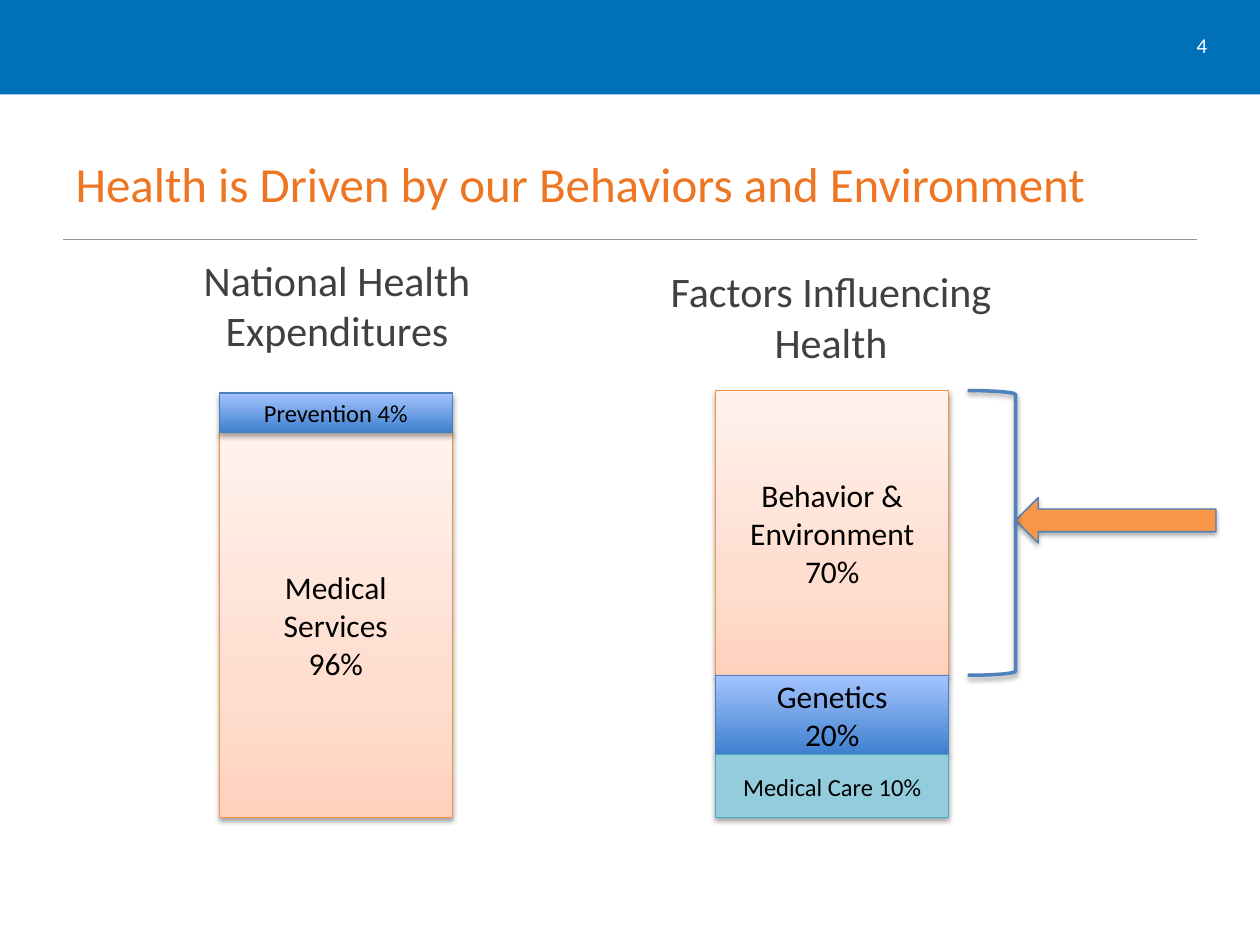
from lxml import etree
from pptx import Presentation
from pptx.dml.color import RGBColor
from pptx.enum.shapes import MSO_CONNECTOR, MSO_SHAPE
from pptx.enum.text import MSO_ANCHOR, PP_ALIGN
from pptx.oxml.ns import qn
from pptx.util import Inches, Pt

RECTANGLE = MSO_SHAPE.RECTANGLE
LEFT_ARROW = MSO_SHAPE.LEFT_ARROW
RIGHT_BRACKET = MSO_SHAPE.RIGHT_BRACKET
STRAIGHT = MSO_CONNECTOR.STRAIGHT
LEFT, CENTER, RIGHT = PP_ALIGN.LEFT, PP_ALIGN.CENTER, PP_ALIGN.RIGHT
TOP, MIDDLE = MSO_ANCHOR.TOP, MSO_ANCHOR.MIDDLE

FONT = "Calibri"
WHITE = RGBColor(0xFF, 0xFF, 0xFF)
BLACK = RGBColor(0x00, 0x00, 0x00)
GRAY = RGBColor(0x40, 0x40, 0x40)
RULE_GRAY = RGBColor(0x96, 0x96, 0x96)
BANNER_BLUE = RGBColor(0x00, 0x71, 0xB9)
TITLE_ORANGE = RGBColor(0xEE, 0x76, 0x23)
ARROW_ORANGE = RGBColor(0xF7, 0x96, 0x46)
EDGE_ORANGE = RGBColor(0xF6, 0x92, 0x40)
EDGE_BLUE = RGBColor(0x4B, 0x7E, 0xBC)
BRACKET_BLUE = RGBColor(0x4F, 0x81, 0xBD)
TEAL = RGBColor(0x93, 0xCD, 0xDD)
EDGE_TEAL = RGBColor(0x46, 0xAA, 0xC5)
PEACH_STOPS = [
    (0, RGBColor(0xFF, 0xD2, 0xBD)),
    (35, RGBColor(0xFF, 0xDE, 0xD0)),
    (100, RGBColor(0xFF, 0xF2, 0xED)),
]
BLUE_STOPS = [
    (0, RGBColor(0x3F, 0x80, 0xCE)),
    (100, RGBColor(0xA4, 0xC4, 0xFF)),
]

BAR_WIDTH = 1.85
PEACH = (PEACH_STOPS, EDGE_ORANGE)
BLUE = (BLUE_STOPS, EDGE_BLUE)
AQUA = (TEAL, EDGE_TEAL)
EXPENDITURES = [
    (0.31, ["Prevention 4%"], 14, BLUE),
    (3.06, ["Medical Services", "96%"], 18, PEACH),
]
FACTORS = [
    (2.26, ["Behavior & Environment", "70%"], 18, PEACH),
    (0.63, ["Genetics", "20%"], 18, BLUE),
    (0.5, ["Medical Care 10%"], 14, AQUA),
]


def write_text(frame, lines, size, color, align, anchor):
    frame.word_wrap = True
    frame.vertical_anchor = anchor
    for index, line in enumerate(lines):
        paragraph = frame.add_paragraph() if index else frame.paragraphs[0]
        paragraph.alignment = align
        run = paragraph.add_run()
        run.text = line
        run.font.name = FONT
        run.font.size = Pt(size)
        run.font.color.rgb = color


def add_label(slide, box, text, size, color, align):
    label = slide.shapes.add_textbox(*map(Inches, box))
    write_text(label.text_frame, [text], size, color, align, TOP)


def add_color(parent, color):
    return etree.SubElement(parent, qn("a:srgbClr"), val=str(color))


def set_gradient(shape, stops):
    shape.fill.gradient()
    shape.fill.gradient_angle = 90
    stop_list = shape._element.spPr.find(".//" + qn("a:gsLst"))
    for old_stop in list(stop_list):
        stop_list.remove(old_stop)
    for position, color in stops:
        stop = etree.SubElement(stop_list, qn("a:gs"), pos=str(position * 1000))
        add_color(stop, color)


def set_shadow(shape):
    effects = shape._element.spPr.find(qn("a:effectLst"))
    shadow = etree.SubElement(
        effects, qn("a:outerShdw"), blurRad=str(Pt(3.1)), dist=str(Pt(1.7)),
        dir="5400000", rotWithShape="0")
    etree.SubElement(add_color(shadow, BLACK), qn("a:alpha"), val="36000")


def add_figure(slide, kind, box, fill=None, edge=None, weight=0.75):
    figure = slide.shapes.add_shape(kind, *map(Inches, box))
    figure.shadow.inherit = False
    if fill is None:
        figure.fill.background()
    elif isinstance(fill, list):
        set_gradient(figure, fill)
    else:
        figure.fill.solid()
        figure.fill.fore_color.rgb = fill
    if edge is None:
        figure.line.fill.background()
    else:
        figure.line.color.rgb = edge
        figure.line.width = Pt(weight)
        set_shadow(figure)
    return figure


def add_stack(slide, left, top, segments):
    placed = []
    for height, lines, size, style in segments:
        placed.append((top, height, lines, size, style))
        top += height
    if segments is EXPENDITURES:
        placed.reverse()
    for segment_top, height, lines, size, (fill, edge) in placed:
        segment = add_figure(
            slide, RECTANGLE, (left, segment_top, BAR_WIDTH, height), fill, edge)
        write_text(segment.text_frame, lines, size, BLACK, CENTER, MIDDLE)


def add_rule(slide):
    rule = slide.shapes.add_connector(
        STRAIGHT, Inches(0.5), Inches(1.9), Inches(9.5), Inches(1.9))
    rule.line.color.rgb = RULE_GRAY
    rule.line.width = Pt(0.75)
    etree.SubElement(rule._element.spPr, qn("a:effectLst"))


def set_title(slide, text):
    title = slide.shapes.title
    title.left, title.top = Inches(0.5), Inches(1)
    title.width, title.height = Inches(9), Inches(0.9)
    write_text(title.text_frame, [text], 28, TITLE_ORANGE, LEFT, MIDDLE)


def main():
    deck = Presentation()
    deck.slide_width, deck.slide_height = Inches(10), Inches(7.5)
    slide = deck.slides.add_slide(deck.slide_layouts[5])

    add_rule(slide)
    add_figure(slide, RECTANGLE, (0, 0, 10, 0.75), BANNER_BLUE)
    set_title(slide, "Health is Driven by our Behaviors and Environment")
    add_label(slide, (3.54, 0.21, 6.14, 0.33), "4", 12, WHITE, RIGHT)

    add_label(slide, (1.08, 1.97, 3.19, 1), "National Health Expenditures",
              24, GRAY, CENTER)
    add_stack(slide, 1.74, 3.12, EXPENDITURES)
    add_label(slide, (5.02, 2.06, 3.15, 1), "Factors Influencing Health",
              24, GRAY, CENTER)
    add_stack(slide, 5.68, 3.1, FACTORS)

    add_figure(slide, LEFT_ARROW, (8.06, 3.95, 1.59, 0.36),
               ARROW_ORANGE, EDGE_BLUE)
    add_figure(slide, RIGHT_BRACKET, (7.68, 3.1, 0.38, 2.26),
               edge=BRACKET_BLUE, weight=2)
    deck.save("out.pptx")


if __name__ == "__main__":
    main()
